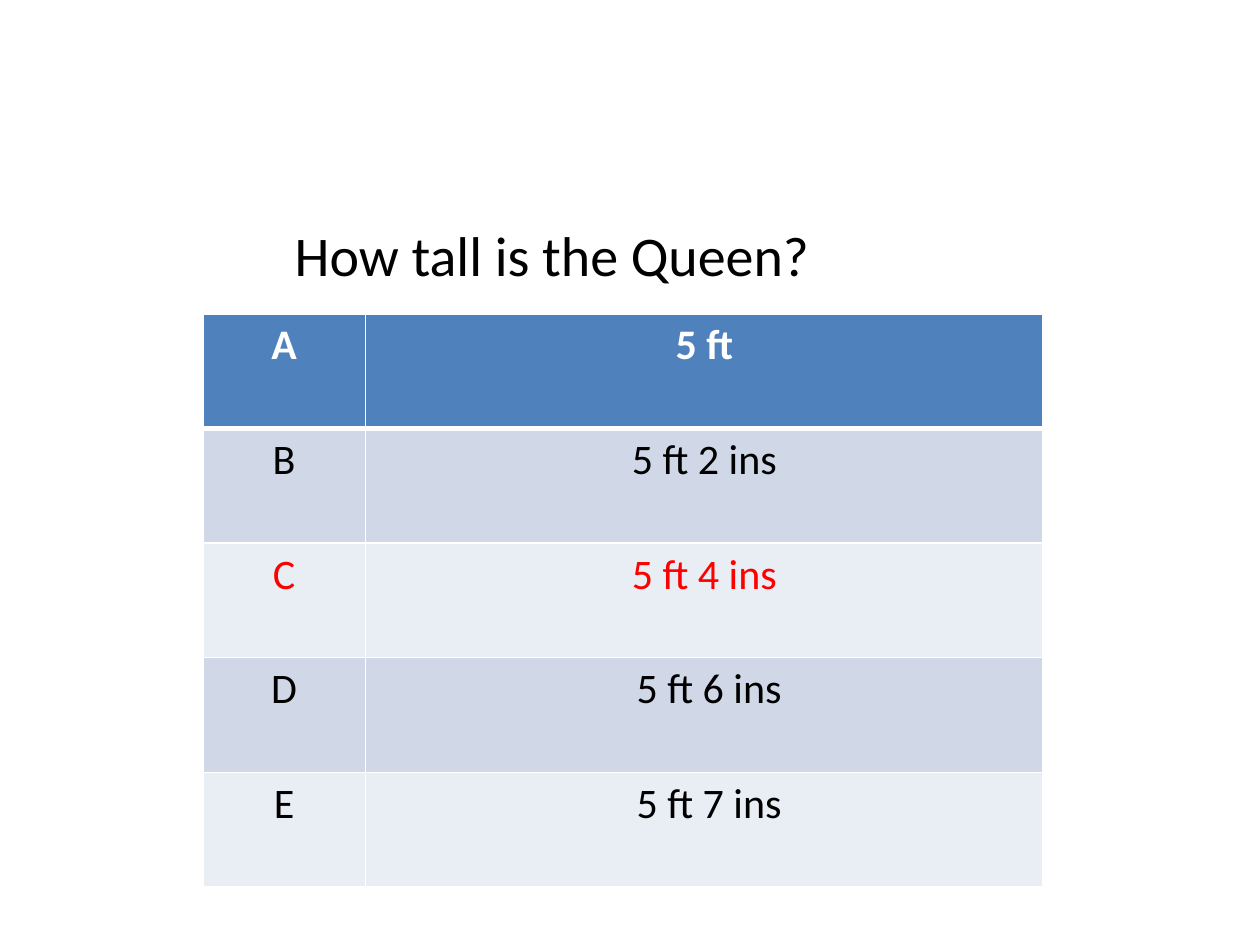
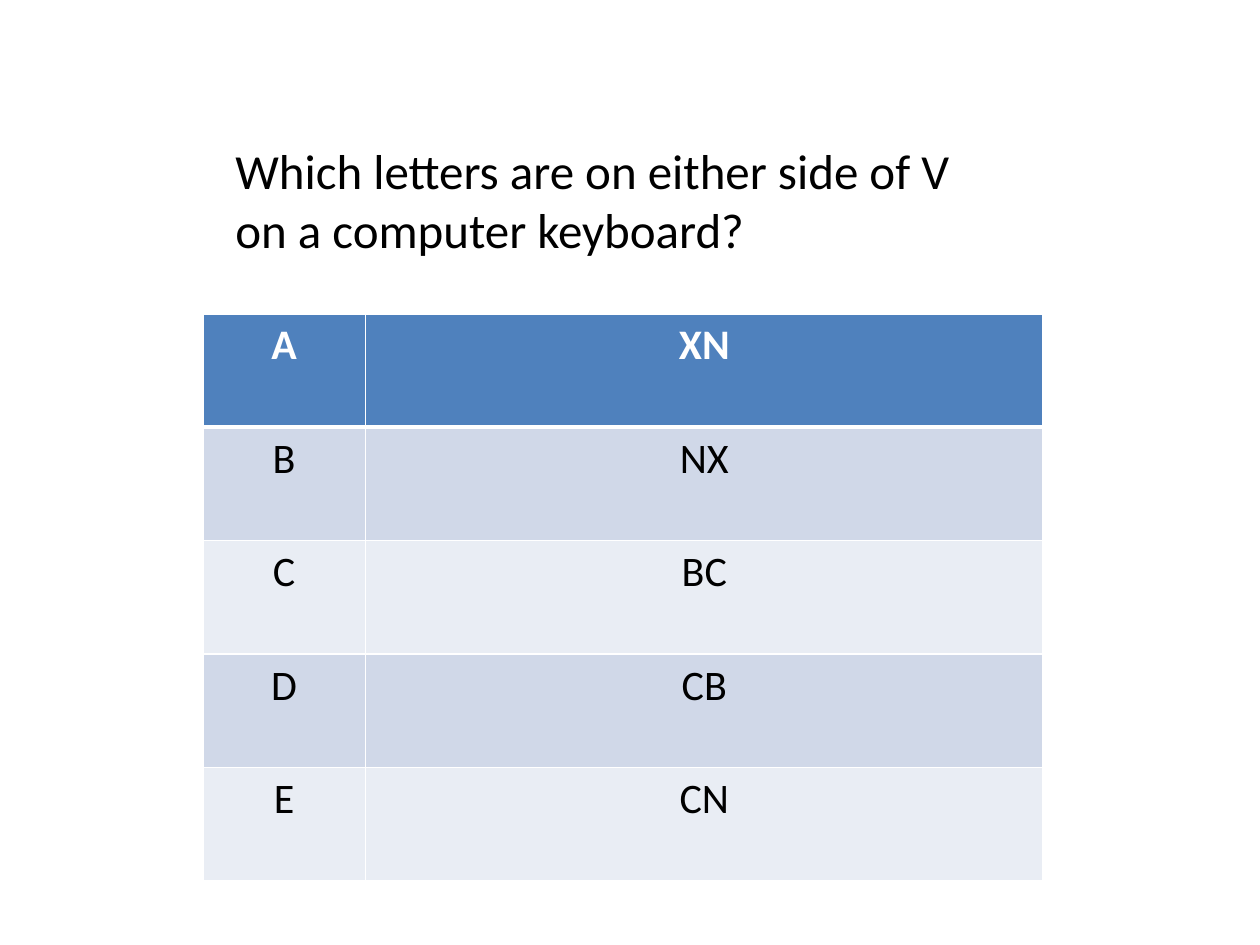
from lxml import etree
from pptx import Presentation
from pptx.dml.color import RGBColor
from pptx.enum.text import MSO_AUTO_SIZE, PP_ALIGN
from pptx.oxml.ns import qn
from pptx.util import Inches, Pt

CENTER = PP_ALIGN.CENTER
GROW = MSO_AUTO_SIZE.SHAPE_TO_FIT_TEXT
FONT = "Calibri"
BLACK = RGBColor(0x00, 0x00, 0x00)
WHITE = RGBColor(0xFF, 0xFF, 0xFF)
RED = RGBColor(0xFF, 0x00, 0x00)
BLUE = RGBColor(0x4F, 0x81, 0xBD)
BANDS = [RGBColor(0xE9, 0xED, 0xF4), RGBColor(0xD0, 0xD8, 0xE8)]

# question, its box, its text size, row height, answers, row in red
QUIZ = [
    ("How tall is the Queen?", (2.24, 1.7, 5.83, 0.64), 32, 0.91,
     ["5 ft", "5 ft 2 ins", "5 ft 4 ins", " 5 ft 6 ins", " 5 ft 7 ins"], 2),
    ("Which letters are on either side of V on a computer keyboard?",
     (1.77, 1.07, 5.98, 1.04), 28, 0.9,
     ["XN", "NX", "BC", "CB", "CN"], None),
]


def add_run(para, text, size, color, bold=False):
    run = para.add_run()
    run.text = text
    run.font.name = FONT
    run.font.size = Pt(size)
    run.font.bold = bold
    run.font.color.rgb = color


def add_edge(cell, side, width):
    """Draw one white cell border; call before the cell's fill is set."""
    props = cell._tc.get_or_add_tcPr()
    line = etree.SubElement(props, qn("a:ln" + side), w=str(Pt(width)))
    fill = etree.SubElement(line, qn("a:solidFill"))
    etree.SubElement(fill, qn("a:srgbClr"), val=str(WHITE))


prs = Presentation()
prs.slide_width = Inches(10)
prs.slide_height = Inches(7.5)
blank = prs.slide_layouts[6]

for question, place, size, height, answers, marked in QUIZ:
    slide = prs.slides.add_slide(blank)

    count = len(answers)
    table = slide.shapes.add_table(
        count, 2, Inches(1.61), Inches(2.49),
        Inches(6.67), Inches(height * count)).table
    table.columns[0].width = Inches(1.29)
    table.columns[1].width = Inches(5.38)

    for row, answer in enumerate(answers):
        head = row == 0
        table.rows[row].height = Inches(height)
        color = WHITE if head else RED if row == marked else BLACK
        for col, text in enumerate(["ABCDE"[row], answer]):
            cell = table.cell(row, col)
            for side in "LRTB":
                thick = (head and side == "B") or (row == 1 and side == "T")
                add_edge(cell, side, 3 if thick else 1)
            cell.fill.solid()
            cell.fill.fore_color.rgb = BLUE if head else BANDS[row % 2]
            para = cell.text_frame.paragraphs[0]
            para.alignment = CENTER
            add_run(para, text, 24, color, head)

    box = slide.shapes.add_textbox(*[Inches(side) for side in place])
    frame = box.text_frame
    frame.word_wrap = True
    frame.auto_size = GROW
    add_run(frame.paragraphs[0], question, size, BLACK)

prs.save("out.pptx")
